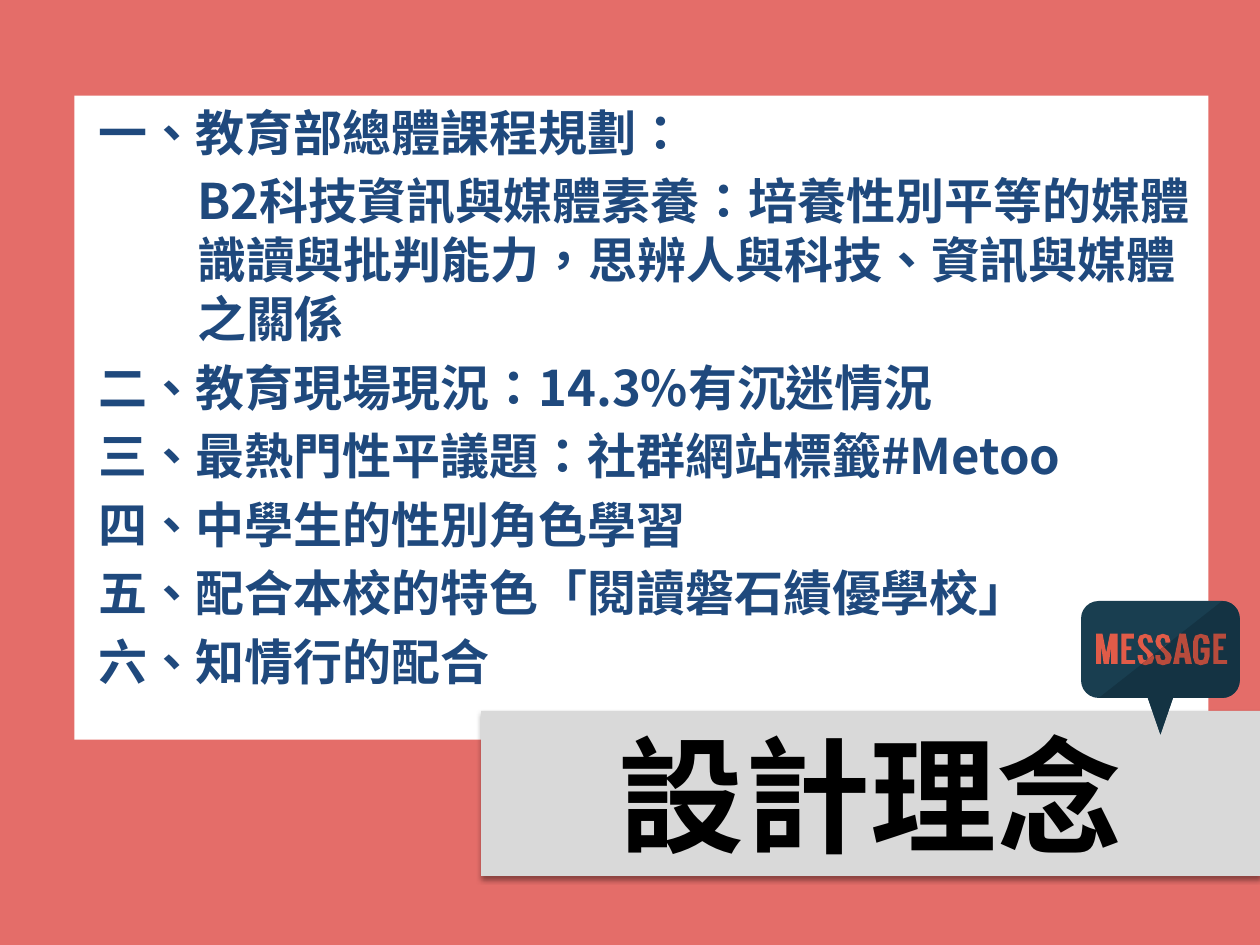
import math

from lxml import etree
from pptx import Presentation
from pptx.dml.color import RGBColor
from pptx.enum.lang import MSO_LANGUAGE_ID
from pptx.enum.shapes import MSO_SHAPE
from pptx.enum.text import MSO_ANCHOR, MSO_AUTO_SIZE, PP_ALIGN
from pptx.oxml.ns import qn
from pptx.util import Cm, Pt

RECTANGLE = MSO_SHAPE.RECTANGLE
TOP, MIDDLE = MSO_ANCHOR.TOP, MSO_ANCHOR.MIDDLE
LEFT, CENTER = PP_ALIGN.LEFT, PP_ALIGN.CENTER
NO_FIT = MSO_AUTO_SIZE.NONE
TAIWAN = MSO_LANGUAGE_ID.TAIWAN if hasattr(MSO_LANGUAGE_ID, "TAIWAN") else MSO_LANGUAGE_ID.TRADITIONAL_CHINESE

FONT = "Noto Sans CJK SC"
CORAL, WHITE, GREY, BLACK, NAVY = "E46D69", "FFFFFF", "D9D9D9", "000000", "1F497D"
BUBBLE_COLORS = ("193E50", "143343")
LETTER_COLORS = ("E15B48", "B84B3C")

TITLE = "設計理念"
POINTS = [
    (" 一、教育部總體課程規劃：", 0),
    ("B2科技資訊與媒體素養：培養性別平等的媒體識讀與批判能力，思辨人與科技、資訊與媒體之關係", 2.22),
    (" 二、教育現場現況：14.3%有沉迷情況", 0),
    (" 三、最熱門性平議題：社群網站標籤#Metoo", 0),
    (" 四、中學生的性別角色學習", 0),
    (" 五、配合本校的特色「閱讀磐石績優學校」", 0),
    (" 六、知情行的配合", 0),
]

UNIT = 0.0254
GLYPHS = {
    "M": [[(17, 0), (17, 24), (12, 24), (12, 10), (10, 24), (6, 24), (4, 10),
           (4, 24), (0, 24), (0, 0), (5, 0), (8, 15), (11, 0)]],
    "E": [[(4, 4), (4, 10), (8, 10), (8, 13), (4, 13), (4, 21), (11, 21),
           (11, 24), (0, 24), (0, 0), (10, 0), (10, 4)]],
    "S": [[(8, 7), (8, 6), (7.5, 4), (6, 3), (4.5, 4), (4, 6), (5, 9), (9, 13),
           (12, 16), (13, 19), (11.5, 23.5), (6, 25), (1.5, 23.5), (0, 19),
           (0, 17), (4, 17), (4, 19), (4.5, 20.5), (6, 21), (7.5, 20.5), (8, 19),
           (7, 16), (3, 12), (1, 9.5), (0, 6), (1.5, 1.5), (6, 0), (10.5, 1.5),
           (12, 6), (12, 7)]],
    "A": [[(9, 19), (5, 19), (5, 24), (0, 24), (5, 0), (10, 0), (15, 24), (10, 24)],
          [(9, 15), (7, 7), (6, 15)]],
    "G": [[(8, 8), (8, 6), (7.5, 4), (6, 3), (4.5, 4), (4, 6), (4, 19), (4.5, 20.5),
           (6, 21), (8, 20.5), (9, 18), (9, 15), (6, 15), (6, 11), (13, 11),
           (13, 18), (11.5, 23.5), (6, 25), (1.5, 23.5), (0, 19), (0, 6),
           (1.5, 1.5), (6, 0), (11.5, 1.5), (13, 6), (13, 8)]],
}
LETTERS = [("M", 870), ("E", 890), ("S", 903), ("S", 917), ("A", 931), ("G", 947), ("E", 963)]
LETTER_TOP = 503
CORNERS = [(872, 491, 180), (970, 491, 270), (970, 540, 0), (872, 540, 90)]
RADIUS = 14
TAIL = [(931, 554), (921, 583), (911, 554)]
SHADE_START, SHADE_END = (872, 554), (970, 477)


def rgb(color):
    return RGBColor.from_string(color)


def paint(shape, color):
    shape.fill.solid()
    shape.fill.fore_color.rgb = rgb(color)
    shape.shadow.inherit = False


def place(shape, left, top, width, height):
    shape.left, shape.top = Cm(left), Cm(top)
    shape.width, shape.height = Cm(width), Cm(height)


def style(para, size, color, align):
    para.alignment = align
    for span in para.runs:
        span.font.size = Pt(size)
        span.font.bold = True
        span.font.name = FONT
        span.font.language_id = TAIWAN
        span.font.color.rgb = rgb(color)
        etree.SubElement(span.font._element, qn("a:ea"), typeface=FONT)


def bubble_outline():
    outline = []
    for x, y, start in CORNERS:
        if start == 90:
            outline += TAIL
        for step in range(7):
            angle = math.radians(start + 15 * step)
            outline.append((x + RADIUS * math.cos(angle), y + RADIUS * math.sin(angle)))
    return outline


def shaded_side(outline):
    (x0, y0), (x1, y1) = SHADE_START, SHADE_END

    def distance(point):
        return (x1 - x0) * (point[1] - y0) - (y1 - y0) * (point[0] - x0)

    kept = []
    for first, second in zip(outline, outline[1:] + outline[:1]):
        a, b = distance(first), distance(second)
        if a >= 0:
            kept.append(first)
        if a * b < 0:
            ratio = a / (a - b)
            kept.append(tuple(p + ratio * (q - p) for p, q in zip(first, second)))
    return kept


def draw(group, outlines, color):
    outlines = [[(Cm(x * UNIT), Cm(y * UNIT)) for x, y in outline]
                for outline in outlines if len(outline) > 2]
    if not outlines:
        return
    builder = group.shapes.build_freeform(*outlines[0][0])
    builder.add_line_segments(outlines[0][1:])
    for outline in outlines[1:]:
        builder.move_to(*outline[0])
        builder.add_line_segments(outline[1:])
    shape = builder.convert_to_shape()
    paint(shape, color)
    shape.line.fill.background()


def add_message_bubble(page):
    group = page.shapes.add_group_shape()
    letters = [[[(left + x, LETTER_TOP + y) for x, y in outline] for outline in GLYPHS[name]]
               for name, left in LETTERS]
    parts = [([bubble_outline()], BUBBLE_COLORS)]
    parts += [(letter, LETTER_COLORS) for letter in letters]
    for outlines, colors in parts:
        draw(group, outlines, colors[0])
    for outlines, colors in parts:
        draw(group, [shaded_side(outline) for outline in outlines], colors[1])
    for letter in letters:
        draw(group, letter[1:], BUBBLE_COLORS[1])


def add_title(title):
    place(title, 9.7, 14.33, 15.7, 3.33)
    paint(title, GREY)
    effects = title._element.spPr.find(qn("a:effectLst"))
    shadow = etree.SubElement(effects, qn("a:outerShdw"), blurRad=str(Pt(3.1)),
                              dist=str(Pt(1.6)), dir="5400000", rotWithShape="0")
    shade = etree.SubElement(shadow, qn("a:srgbClr"), val=BLACK)
    etree.SubElement(shade, qn("a:alpha"), val="38000")
    frame = title.text_frame
    frame.text = TITLE
    frame.auto_size = NO_FIT
    frame.vertical_anchor = MIDDLE
    style(frame.paragraphs[0], 72, BLACK, CENTER)


def add_points(body):
    place(body, 1.5, 1.93, 22.86, 12.98)
    paint(body, WHITE)
    frame = body.text_frame
    frame.auto_size = NO_FIT
    frame.vertical_anchor = TOP
    for index, (text, margin) in enumerate(POINTS):
        para = frame.add_paragraph() if index else frame.paragraphs[0]
        para.text = text
        style(para, 28, NAVY, LEFT)
        properties = para._element.get_or_add_pPr()
        properties.set("marL", str(Cm(margin)))
        properties.set("indent", "0")
        etree.SubElement(properties, qn("a:buNone"))


def main():
    deck = Presentation()
    deck.slide_width, deck.slide_height = Cm(25.4), Cm(19.05)
    page = deck.slides.add_slide(deck.slide_layouts[1])
    title, body = page.shapes.title, page.placeholders[1]
    backdrop = page.shapes.add_shape(RECTANGLE, 0, 0, deck.slide_width, deck.slide_height)
    paint(backdrop, CORAL)
    backdrop.line.fill.background()
    body._element.addprevious(backdrop._element)
    body._element.addnext(title._element)
    add_points(body)
    add_title(title)
    add_message_bubble(page)
    deck.save("out.pptx")


if __name__ == "__main__":
    main()
